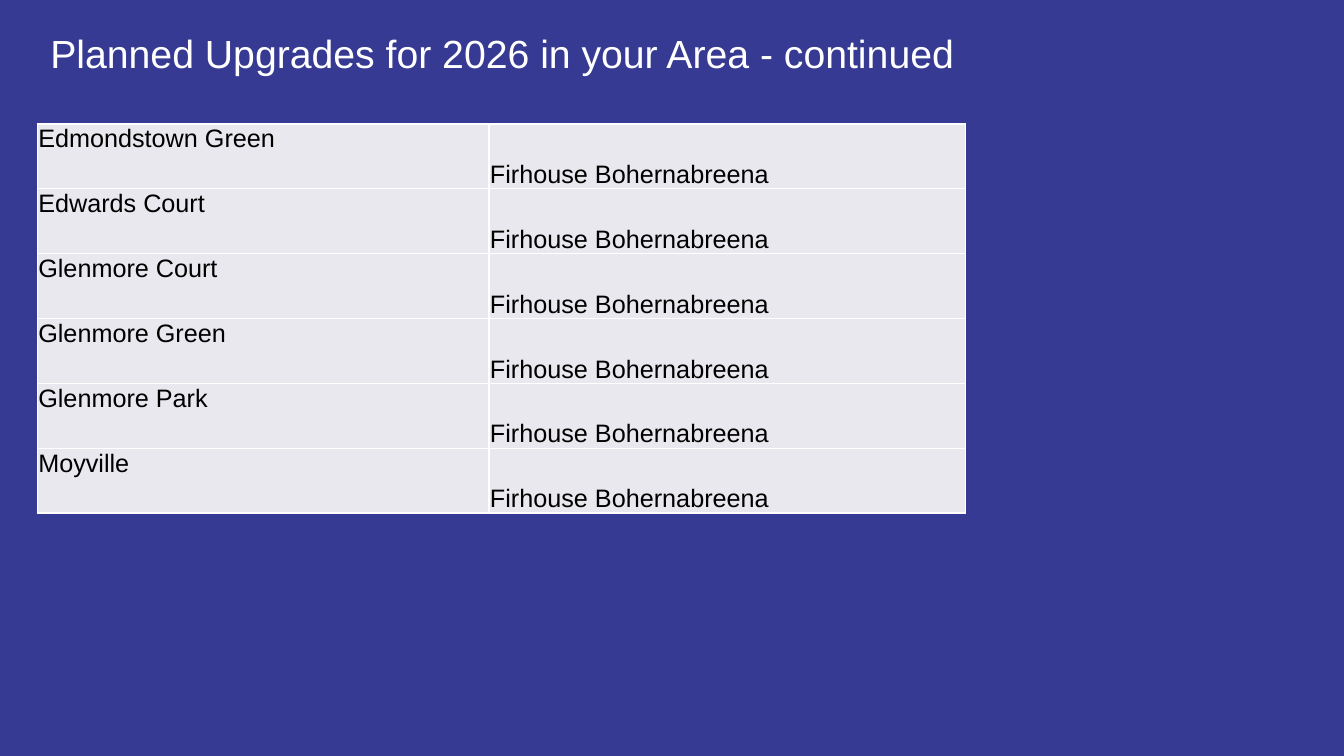
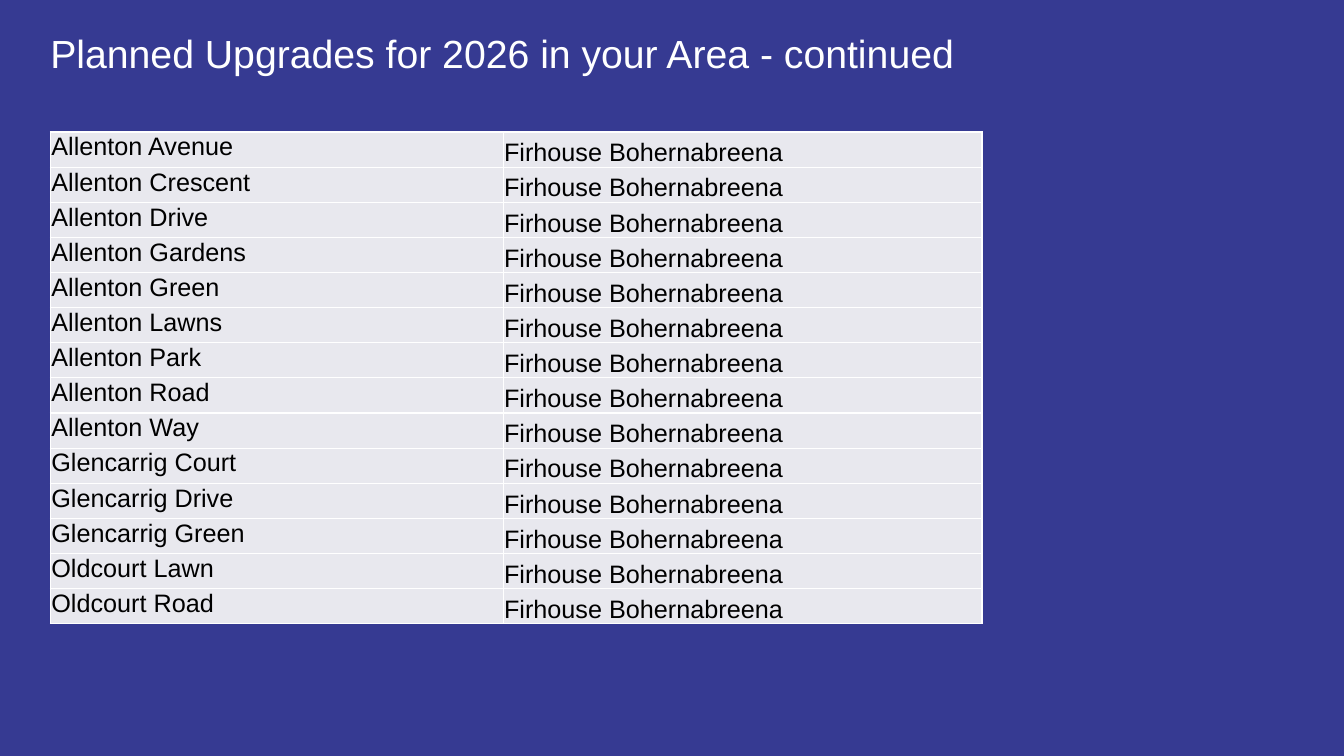
import pptx
import pptx.dml.color
import pptx.enum.text
import pptx.util
from lxml import etree
from pptx.oxml.ns import qn

Inches, Pt = pptx.util.Inches, pptx.util.Pt
ANCHOR = pptx.enum.text.MSO_ANCHOR

# Shared style and wording
BACKGROUND = "363A92"
WHITE = "FFFFFF"
BLACK = "000000"
CELL_FILL = "E8E8EE"
FONT = "Arial"
TITLE = "Planned Upgrades for 2026 in your Area - continued"
DISTRICT = "Firhouse Bohernabreena"

# Per slide: table left, top, total height, column widths, estates
pages = [
    (0.37, 1.23, 3.86, (4.48, 4.73), [
        "Edmondstown Green", "Edwards Court", "Glenmore Court",
        "Glenmore Green", "Glenmore Park", "Moyville",
    ]),
    (0.5, 1.31, 4.88, (4.49, 4.75), [
        "Allenton Avenue", "Allenton Crescent", "Allenton Drive",
        "Allenton Gardens", "Allenton Green", "Allenton Lawns",
        "Allenton Park", "Allenton Road", "Allenton Way",
        "Glencarrig Court", "Glencarrig Drive", "Glencarrig Green",
        "Oldcourt Lawn", "Oldcourt Road",
    ]),
]


def paint(fill, colour):
    fill.solid()
    fill.fore_color.rgb = pptx.dml.color.RGBColor.from_string(colour)


def write(frame, text, size, colour):
    paragraph = frame.paragraphs[0]
    paragraph.text = text
    paragraph.font.name = FONT
    paragraph.font.size = Pt(size)
    paint(paragraph.font.fill, colour)


deck = pptx.Presentation()
deck.slide_width, deck.slide_height = Inches(13.33), Inches(7.5)
paint(deck.slide_master.background.fill, BACKGROUND)

for left, top, height, widths, estates in pages:
    slide = deck.slides.add_slide(deck.slide_layouts[6])

    # Title
    title = slide.shapes.add_textbox(
        Inches(0.5), Inches(0.29), Inches(12.34), Inches(0.71)).text_frame
    title.word_wrap = True
    title.margin_left = title.margin_right = 0
    title.margin_top = title.margin_bottom = 0
    write(title, TITLE, 28, WHITE)

    # Table of estates
    upgrades = slide.shapes.add_table(
        len(estates), len(widths), Inches(left), Inches(top),
        Inches(sum(widths)), Inches(height)).table
    upgrades.first_row = upgrades.horz_banding = False
    for column, width in zip(upgrades.columns, widths):
        column.width = Inches(width)

    for row, estate in enumerate(estates):
        for col, (text, anchor) in enumerate(
                [(estate, ANCHOR.TOP), (DISTRICT, ANCHOR.BOTTOM)]):
            cell = upgrades.cell(row, col)
            cell.margin_left = cell.margin_right = cell.margin_top = Inches(0.01)
            cell.margin_bottom = 0
            cell.vertical_anchor = anchor
            write(cell.text_frame, text, 18, BLACK)

            # White borders come before the fill
            properties = cell._tc.get_or_add_tcPr()
            for side in ("a:lnL", "a:lnR", "a:lnT", "a:lnB"):
                border = etree.SubElement(properties, qn(side), w=str(Pt(1)))
                border_fill = etree.SubElement(border, qn("a:solidFill"))
                etree.SubElement(border_fill, qn("a:srgbClr"), val=WHITE)
            paint(cell.fill, CELL_FILL)

deck.save("out.pptx")
